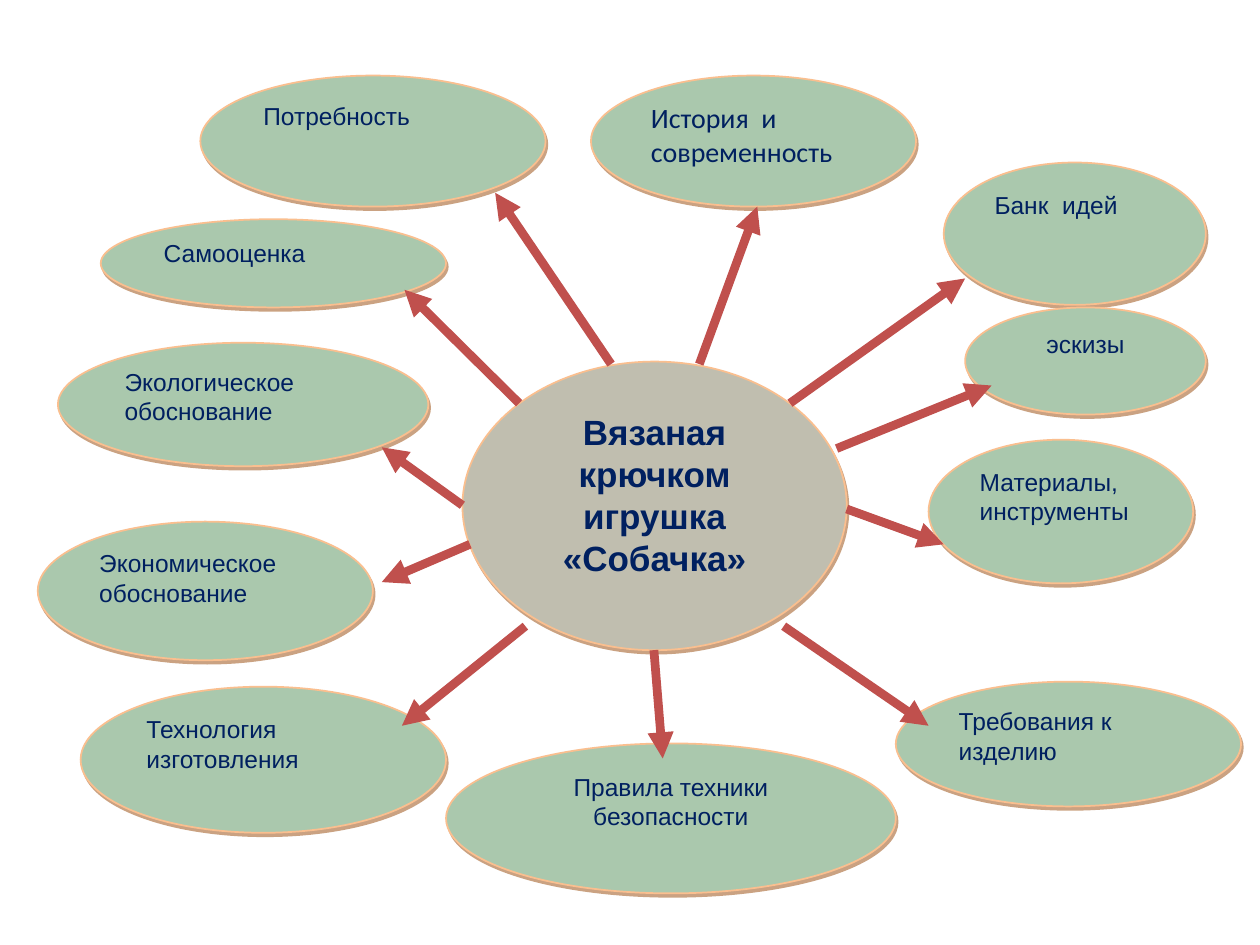
"""Build a mind-map slide: a central topic with arrows to its surrounding bubbles."""
from dataclasses import dataclass

from lxml.etree import SubElement
from pptx import Presentation
from pptx.dml.color import RGBColor
from pptx.enum.shapes import MSO_CONNECTOR as Connector, MSO_SHAPE as Preset
from pptx.enum.text import MSO_ANCHOR as Anchor, PP_ALIGN as Align
from pptx.oxml.ns import qn
from pptx.util import Inches, Pt


@dataclass(frozen=True)
class Theme:
    bubble: str = "AAC8AD"
    center: str = "C0BEAF"
    outline: str = "FABF8F"
    shadow: str = "974706"
    arrow: str = "C0504D"
    text: str = "002060"
    font: str = "Arial"
    center_size: int = 20
    bubble_size: int = 14
    outline_width: int = 1
    arrow_width: int = 5


@dataclass(frozen=True)
class Bubble:
    text: str
    box: tuple[float, float, float, float]
    start: tuple[float, float] | None = None
    end: tuple[float, float] | None = None
    align: Align = Align.LEFT
    fill: str = Theme.bubble
    font: str = Theme.font
    size: int = Theme.bubble_size
    bold: bool = False
    space_after: int = 0


THEME = Theme()

CENTER = Bubble("Вязаная крючком игрушка «Собачка»", (3.67, 2.87, 3.05, 2.29),
                align=Align.CENTER, fill=THEME.center, size=THEME.center_size, bold=True)

BUBBLES = [
    Bubble("Потребность", (1.59, 0.6, 2.74, 1.04), (4.85, 2.89), (3.93, 1.53)),
    Bubble("История  и современность", (4.69, 0.6, 2.58, 1.04), (5.55, 2.89), (6.01, 1.64),
           font="Calibri", size=16, space_after=10),
    Bubble("Банк  идей", (7.49, 1.29, 2.08, 1.13), (6.27, 3.2), (7.66, 2.21)),
    Bubble("эскизы", (7.66, 2.44, 1.91, 0.85), (6.64, 3.56), (7.87, 3.06), Align.CENTER),
    Bubble("Материалы, инструменты", (7.37, 3.49, 2.1, 1.14), (6.72, 4.04), (7.49, 4.32)),
    Bubble("Требования к изделию", (7.11, 5.41, 2.74, 0.99), (6.22, 4.97), (7.37, 5.76)),
    Bubble("Правила техники безопасности", (3.54, 5.9, 3.57, 1.19), (5.19, 5.16), (5.26, 6.02),
           Align.CENTER),
    Bubble("Технология изготовления", (0.64, 5.45, 2.9, 1.16), (4.17, 4.97), (3.19, 5.76)),
    Bubble("Экономическое обоснование", (0.3, 4.14, 2.66, 1.1), (3.73, 4.32), (3.03, 4.62)),
    Bubble("Экологическое обоснование", (0.46, 2.72, 2.94, 0.98), (3.67, 4.01), (3.03, 3.55)),
    Bubble("Самооценка", (0.8, 1.74, 2.74, 0.7), (4.12, 3.2), (3.21, 2.3)),
]


def rgb(value: str) -> RGBColor:
    return RGBColor.from_string(value)


def add_shadow(shape) -> None:
    effects = SubElement(shape.element.spPr, qn("a:effectLst"))
    shadow = SubElement(effects, qn("a:outerShdw"), blurRad="0", dist=str(Pt(2.2)),
                        dir=str(63 * 60000), algn="ctr", rotWithShape="0")
    color = SubElement(shadow, qn("a:srgbClr"), val=THEME.shadow)
    SubElement(color, qn("a:alpha"), val="50000")


def add_bubble(page, bubble: Bubble) -> None:
    shape = page.shapes.add_shape(Preset.OVAL, *map(Inches, bubble.box))
    shape.fill.solid()
    shape.fill.fore_color.rgb = rgb(bubble.fill)
    shape.line.color.rgb = rgb(THEME.outline)
    shape.line.width = Pt(THEME.outline_width)
    add_shadow(shape)
    frame = shape.text_frame
    frame.word_wrap = True
    frame.vertical_anchor = Anchor.TOP
    para = frame.paragraphs[0]
    para.alignment = bubble.align
    para.space_after = Pt(bubble.space_after)
    span = para.add_run()
    span.text = bubble.text
    span.font.name = bubble.font
    span.font.size = Pt(bubble.size)
    span.font.bold = bubble.bold
    span.font.color.rgb = rgb(THEME.text)


def add_arrow(page, bubble: Bubble) -> None:
    arrow = page.shapes.add_connector(Connector.STRAIGHT,
                                      *map(Inches, bubble.start + bubble.end))
    arrow.line.color.rgb = rgb(THEME.arrow)
    arrow.line.width = Pt(THEME.arrow_width)
    SubElement(arrow.line._get_or_add_ln(), qn("a:tailEnd"), type="triangle")
    SubElement(arrow.element.spPr, qn("a:effectLst"))


def main() -> None:
    deck = Presentation()
    deck.slide_width, deck.slide_height = Inches(10), Inches(7.5)
    page = deck.slides.add_slide(deck.slide_layouts[6])
    for bubble in [CENTER, *BUBBLES]:
        add_bubble(page, bubble)
    for bubble in BUBBLES:
        add_arrow(page, bubble)
    deck.save("out.pptx")


if __name__ == "__main__":
    main()
